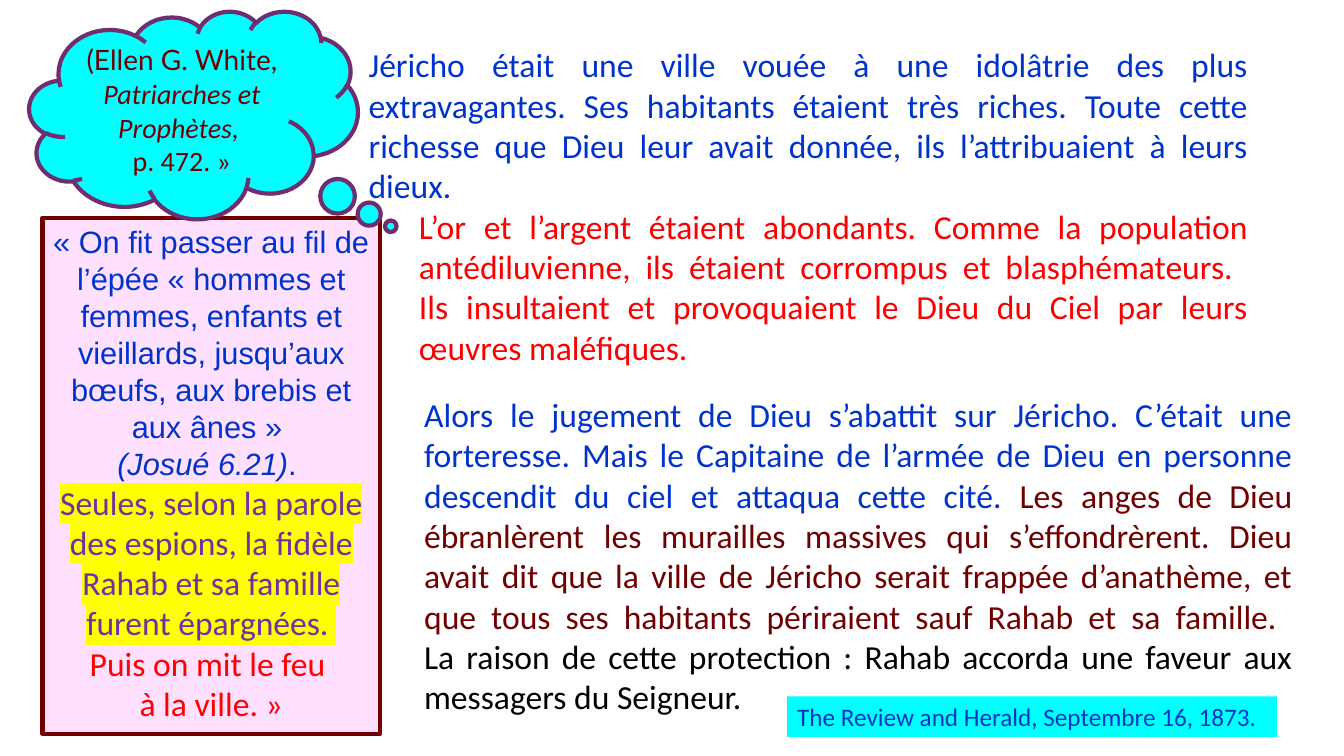
from lxml import etree
from pptx import Presentation
from pptx import util as u
from pptx.dml import color
from pptx.enum import shapes, text
from pptx.oxml import ns

COLORS = {
    "blue": "0033CC", "red": "FB0000", "fire": "FF0000", "maroon": "700000",
    "black": "000000", "violet": "7030A0", "plum": "702D70",
    "cyan": "00FFFF", "pink": "FFE0FF", "yellow": "FFFF00",
}
BODY = {"name": "Calibri", "size": u.Pt(24)}
VERSE = {"name": "Arial", "size": u.Pt(22)}
SOURCE = {"name": "Calibri", "size": u.Pt(20)}
LATO = {"name": "Lato", "size": u.Pt(20)}
NOTE = {"name": "Calibri", "size": u.Pt(18)}
JUSTIFY, CENTER, LEFT = text.PP_ALIGN.JUSTIFY, text.PP_ALIGN.CENTER, text.PP_ALIGN.LEFT
TOP, MIDDLE = text.MSO_ANCHOR.TOP, text.MSO_ANCHOR.MIDDLE
RECTANGLE, CLOUD = shapes.MSO_SHAPE.RECTANGLE, shapes.MSO_SHAPE.CLOUD_CALLOUT


def rgb(name):
    return color.RGBColor.from_string(COLORS[name])


def add_span(para, words, style, tint, marker=None):
    for index, line in enumerate(words.split("\n")):
        if index:
            para.add_line_break()
        if not line:
            continue
        span = para.add_run()
        span.text = line
        for key, value in style.items():
            setattr(span.font, key, value)
        span.font.color.rgb = rgb(tint)
        if marker:
            highlight = etree.Element(ns.qn("a:highlight"))
            etree.SubElement(highlight, ns.qn("a:srgbClr"), val=COLORS[marker])
            span.font._element.find(ns.qn("a:solidFill")).addnext(highlight)


jericho = [
    [("Jéricho était une ville vouée à une idolâtrie des plus extravagantes. Ses habitants "
      "étaient très riches. Toute cette richesse que Dieu leur avait donnée, ils "
      "l’attribuaient à leurs dieux. ", BODY, "blue")],
    [("L’or et l’argent étaient abondants. Comme la population antédiluvienne, ils étaient "
      "corrompus et blasphémateurs. \nIls insultaient et provoquaient le Dieu du Ciel par "
      "leurs œuvres maléfiques.", BODY, "red")],
]
judgement = [[
    ("Alors le jugement de Dieu s’abattit sur Jéricho. C’était une forteresse. Mais le "
     "Capitaine de l’armée de Dieu en personne descendit du ciel et attaqua cette cité. ",
     BODY, "blue"),
    ("Les anges de Dieu ébranlèrent les murailles massives qui s’effondrèrent. Dieu avait "
     "dit que la ville de Jéricho serait frappée d’anathème, et que tous ses habitants "
     "périraient sauf Rahab et sa famille. \n", BODY, "maroon"),
    ("La raison de cette protection : Rahab accorda une faveur aux messagers du Seigneur. ",
     BODY, "black"),
]]
reference = [[("The Review and Herald, Septembre 16, 1873.", NOTE, "blue")]]
quotation = [
    [("« On fit passer au fil de l’épée « hommes et femmes, enfants et vieillards, "
      "jusqu’aux bœufs, aux brebis et aux ânes » \n", VERSE, "blue"),
     ("(Josué 6.21)", VERSE | {"italic": True}, "blue"),
     (". ", VERSE, "blue")],
    [("Seules, selon la parole des espions, la fidèle Rahab et sa famille furent "
      "épargnées. \n", BODY, "violet", "yellow"),
     ("Puis on mit le feu \nà la ville. »", BODY, "fire")],
]
author = [
    [("(Ellen G. White,", LATO, "maroon")],
    [("Patriarches et Prophètes, \n", SOURCE | {"italic": True}, "maroon"),
     ("p. 472. »", SOURCE, "maroon")],
]

blocks = [
    (None, (9.04, 0.99, 22.66, 8.46), None, None, TOP, JUSTIFY, jericho),
    (None, (10.44, 9.8, 22.38, 9.25), None, None, TOP, JUSTIFY, judgement),
    (RECTANGLE, (19.84, 17.55, 12.34, 1.02), "cyan", None, TOP, LEFT, reference),
    (RECTANGLE, (1.07, 5.49, 8.51, 13), "pink", "maroon", TOP, CENTER, quotation),
    (CLOUD, (0.74, 0.28, 8.28, 5.23), "cyan", "plum", MIDDLE, CENTER, author),
]

deck = Presentation()
deck.slide_width, deck.slide_height = u.Cm(33.87), u.Cm(19.05)
page = deck.slides.add_slide(deck.slide_layouts[6])

for kind, place, fill, outline, anchor, align, paragraphs in blocks:
    place = [u.Cm(length) for length in place]
    if kind is None:
        box = page.shapes.add_textbox(*place)
    else:
        box = page.shapes.add_shape(kind, *place)
        box.shadow.inherit = False
        box.fill.solid()
        box.fill.fore_color.rgb = rgb(fill)
        if outline:
            box.line.color.rgb = rgb(outline)
            box.line.width = u.Pt(3)
        else:
            box.line.fill.background()
    if kind == CLOUD:
        box.adjustments[0], box.adjustments[1] = 0.6, 0.537
    frame = box.text_frame
    frame.word_wrap = True
    frame.vertical_anchor = anchor
    for number, spans in enumerate(paragraphs):
        para = frame.add_paragraph() if number else frame.paragraphs[0]
        para.alignment = align
        if paragraphs is jericho and number:
            para.level = 1
            properties = para._p.get_or_add_pPr()
            properties.set("marL", str(u.Cm(1.27)))
            properties.set("indent", "0")
        for span in spans:
            add_span(para, *span)

deck.save("out.pptx")
